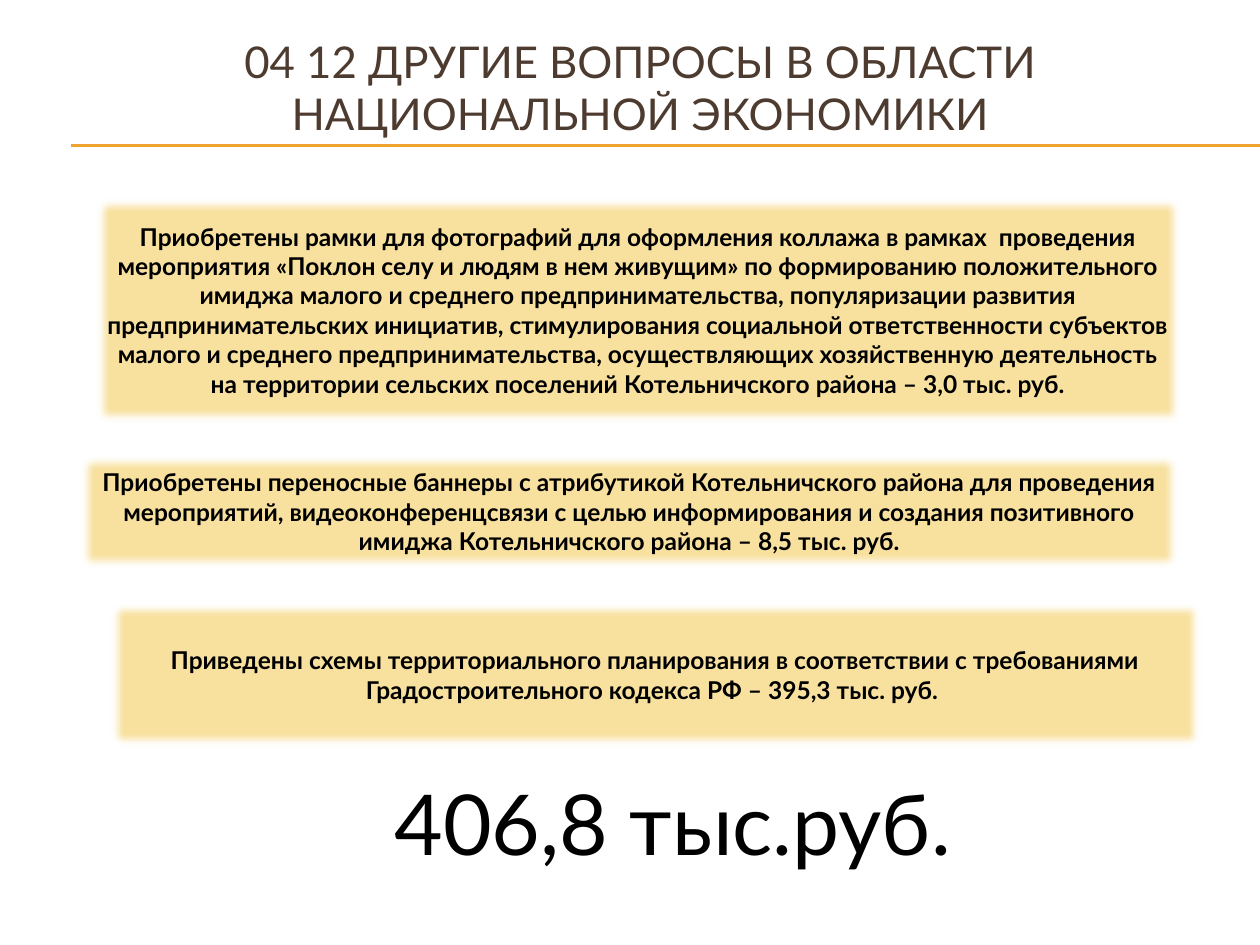
from lxml.etree import SubElement
from pptx import Presentation
from pptx.dml.color import RGBColor
from pptx.enum.shapes import MSO_CONNECTOR, MSO_SHAPE
from pptx.enum.text import MSO_ANCHOR, PP_ALIGN
from pptx.oxml.ns import qn
from pptx.util import Inches, Pt

COLORS = {"title": "4E3B30", "rule": "F0A22E", "card": "F8E19F",
          "edge": "B27822", "text": "000000"}

deck = Presentation()
deck.slide_width, deck.slide_height = Inches(10), Inches(7.5)
page = deck.slides.add_slide(deck.slide_layouts[6])

# Grid of 100 columns by 75 rows
column = deck.slide_width / 100
row = deck.slide_height / 75


def place(left, top, width, height):
    return [round(left * column), round(top * row),
            round(width * column), round(height * row)]


def write(box, text, size, color, bold, anchor):
    frame = box.text_frame
    frame.word_wrap = True
    frame.vertical_anchor = anchor
    para = frame.paragraphs[0]
    para.alignment = PP_ALIGN.CENTER
    span = para.add_run()
    span.text = text
    span.font.color.rgb = RGBColor.from_string(COLORS[color])
    for name, value in {"name": "Lato", "size": Pt(size), "bold": bold}.items():
        setattr(span.font, name, value)


# Double rule under the title
for level in (11.5, 11.6):
    left, top, width, _ = place(5.6, level, 94.4, 0)
    rule = page.shapes.add_connector(MSO_CONNECTOR.STRAIGHT, left, top, left + width, top)
    rule.line.color.rgb = RGBColor.from_string(COLORS["rule"])
    rule.line.width = Pt(0.75)
    SubElement(rule.element.spPr, qn("a:effectLst"))

# Title and total
captions = [
    ("04 12 ДРУГИЕ ВОПРОСЫ В ОБЛАСТИ НАЦИОНАЛЬНОЙ ЭКОНОМИКИ",
     (3.3, 2.3, 95, 9.2), 25, "title", MSO_ANCHOR.MIDDLE),
    ("406,8 тыс.руб.", (26.8, 60.7, 53.2, 9.1), 48, "text", MSO_ANCHOR.TOP),
]
for text, area, size, color, anchor in captions:
    box = page.shapes.add_textbox(*place(*area))
    write(box, text, size, color, False, anchor)

# Expense cards with soft edges
cards = [
    ((7.5, 15.6, 86.3, 18),
     "Приобретены рамки для фотографий для оформления коллажа в рамках  проведения "
     "мероприятия «Поклон селу и людям в нем живущим» по формированию положительного "
     "имиджа малого и среднего предпринимательства, популяризации развития "
     "предпринимательских инициатив, стимулирования социальной ответственности субъектов "
     "малого и среднего предпринимательства, осуществляющих хозяйственную деятельность "
     "на территории сельских поселений Котельничского района – 3,0 тыс. руб."),
    ((6.2, 35.9, 87.5, 9.4),
     "Приобретены переносные баннеры с атрибутикой Котельничского района для проведения "
     "мероприятий, видеоконференцсвязи с целью информирования и создания позитивного "
     "имиджа Котельничского района – 8,5 тыс. руб."),
    ((8.6, 47.7, 86.8, 11.7),
     "Приведены схемы территориального планирования в соответствии с требованиями "
     "Градостроительного кодекса РФ – 395,3 тыс. руб. "),
]
for area, text in cards:
    card = page.shapes.add_shape(MSO_SHAPE.RECTANGLE, *place(*area))
    card.fill.solid()
    card.fill.fore_color.rgb = RGBColor.from_string(COLORS["card"])
    card.line.color.rgb = RGBColor.from_string(COLORS["edge"])
    card.line.width = Pt(0.25)
    card.shadow.inherit = False
    effects = card.element.spPr.find(qn("a:effectLst"))
    SubElement(effects, qn("a:softEdge"), rad=str(Pt(5)))
    write(card, text, 14, "text", True, MSO_ANCHOR.MIDDLE)

deck.save("out.pptx")
